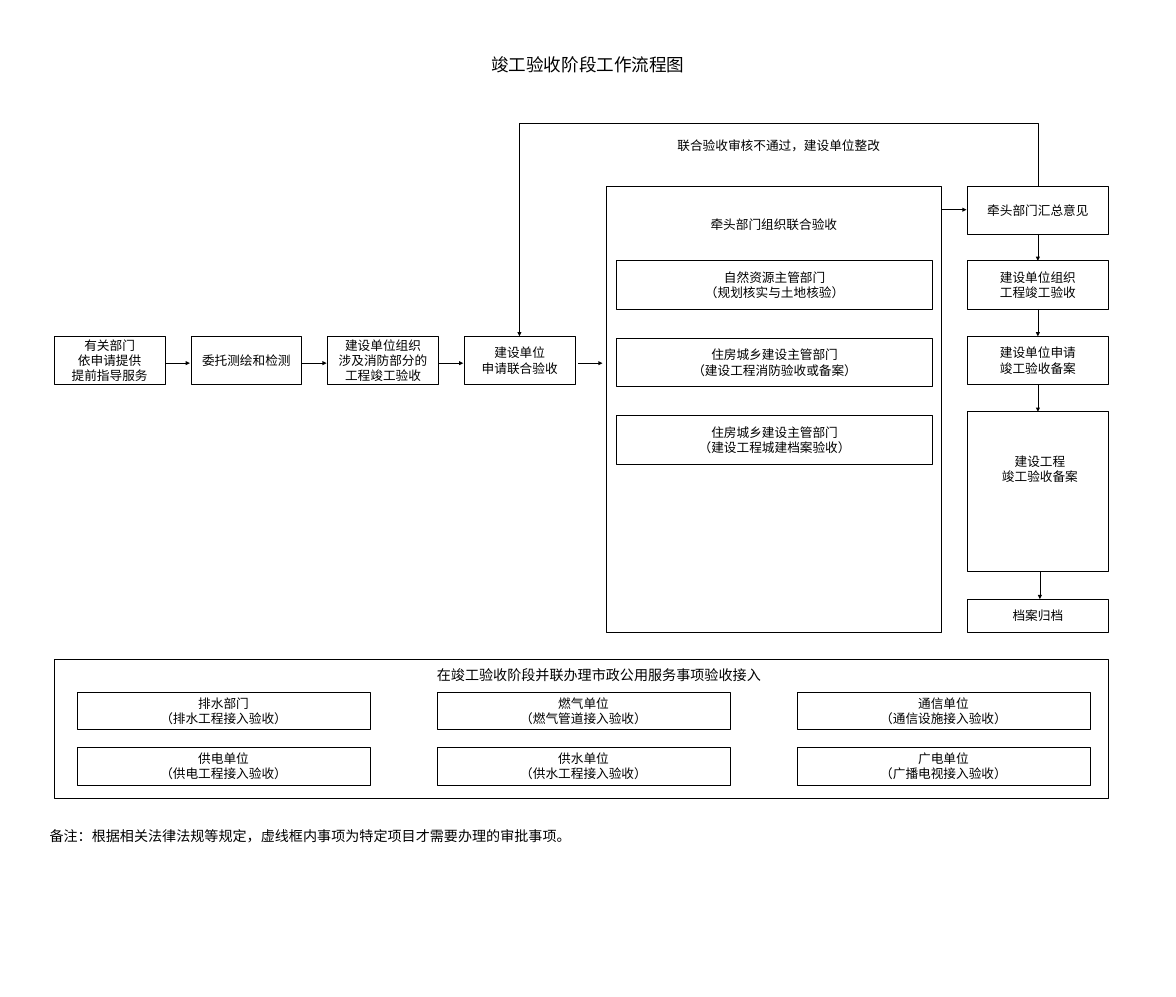
from dataclasses import dataclass

from lxml import etree
from pptx import Presentation
from pptx import util as u
from pptx.dml.color import RGBColor
from pptx.enum import shapes, text
from pptx.oxml import ns


@dataclass(frozen=True)
class Theme:
    font: str = "Noto Sans CJK SC"
    ink: str = "000000"
    title: float = 25
    note: float = 20
    body: float = 18
    border: float = 1
    arrow: float = 0.5


THEME = Theme()
INK = RGBColor.from_string(THEME.ink)


def write(frame, words, size=THEME.body, align=text.PP_ALIGN.CENTER,
          anchor=text.MSO_ANCHOR.MIDDLE, space=None):
    frame.word_wrap = True
    frame.vertical_anchor = anchor
    for i, line in enumerate(words.split("\n")):
        para = frame.paragraphs[0] if i == 0 else frame.add_paragraph()
        para.alignment = align
        if space:
            para.line_spacing = space
        run = para.add_run()
        run.text = line
        font = run.font
        font.size, font.name = u.Pt(size), THEME.font
        font.color.rgb = INK
        # Chinese glyphs take their face from the East Asian font
        east = etree.SubElement(run._r.get_or_add_rPr(), ns.qn("a:ea"))
        east.set("typeface", THEME.font)


def label(slide, box, words, **style):
    style.setdefault("anchor", text.MSO_ANCHOR.TOP)
    area = slide.shapes.add_textbox(*map(u.Inches, box))
    write(area.text_frame, words, **style)
    if style["anchor"] == text.MSO_ANCHOR.TOP:
        area.text_frame.auto_size = text.MSO_AUTO_SIZE.SHAPE_TO_FIT_TEXT


def frame(slide, box, words=""):
    """Outlined rectangle, with centred text if there is any."""
    rect = slide.shapes.add_shape(shapes.MSO_SHAPE.RECTANGLE, *map(u.Inches, box))
    rect.shadow.inherit = False
    rect.fill.background()
    rect.line.color.rgb = INK
    rect.line.width = u.Pt(THEME.border)
    if words:
        write(rect.text_frame, words)


def arrow(slide, start, end, kind=shapes.MSO_CONNECTOR.STRAIGHT):
    link = slide.shapes.add_connector(kind, *map(u.Inches, (*start, *end)))
    link.line.color.rgb = INK
    link.line.width = u.Pt(THEME.arrow)
    tail = etree.SubElement(link.line._get_or_add_ln(), ns.qn("a:tailEnd"))
    tail.set("type", "triangle")
    etree.SubElement(link._element.spPr, ns.qn("a:effectLst"))
    return link


def steps(slide, left, top):
    """Row of steps that leads to the joint acceptance panel."""
    wide, high, pitch = 2.19, 0.95, 2.7
    names = ["有关部门\n依申请提供\n提前指导服务", "委托测绘和检测",
             "建设单位组织\n涉及消防部分的工程竣工验收", "建设单位\n申请联合验收"]
    for i, name in enumerate(names):
        x = left + i * pitch
        frame(slide, (x, top, wide, high), name)
        tip = x + wide + (0.06 if i == len(names) - 1 else 0.01)
        arrow(slide, (tip, top + 0.53), (tip + 0.48, top + 0.53))


def joint(slide, left, top, wide, high):
    """Panel of departments that accept the works together."""
    frame(slide, (left, top, wide, high))
    label(slide, (left + 1.4, top + 0.52, 3.83, 0.5), "牵头部门组织联合验收",
          anchor=text.MSO_ANCHOR.MIDDLE)
    names = ["自然资源主管部门\n（规划核实与土地核验）",
             "住房城乡建设主管部门\n（建设工程消防验收或备案）",
             "住房城乡建设主管部门\n（建设工程城建档案验收）"]
    for i, name in enumerate(names):
        y = top + 1.48 + i * 1.53
        frame(slide, (left + 0.21, y, 6.24, 0.95), name)
    arrow(slide, (left + wide, top + 0.47), (left + wide + 0.49, top + 0.47))


def closing(slide, left, top, wide):
    """Column of steps from the summary to the archive."""
    mid = left + wide / 2
    stages = [(0, 0.95, "牵头部门汇总意见"), (1.48, 0.95, "建设单位组织\n工程竣工验收"),
              (2.97, 0.95, "建设单位申请\n竣工验收备案"), (4.46, 3.15, ""),
              (8.16, 0.65, "档案归档")]
    for drop, high, name in stages:
        frame(slide, (left, top + drop, wide, high), name)
    for (drop, high, _), (below, _, _) in zip(stages, stages[1:]):
        x = mid + (0 if high < 1 else 0.04)
        arrow(slide, (x, top + drop + high), (x, top + below))
    label(slide, (left - 0.52, top + 5.24, 3.92, 0.71), "建设工程\n竣工验收备案")


def rework(slide, start, end, rise):
    """Elbow that leaves start upwards, runs across and drops onto end."""
    (x1, y1), (x2, y2) = start, end
    cx, cy = (x1 + x2) / 2, (y1 + y2) / 2
    across, down = (x1 - x2) / 2, (y2 - y1) / 2
    # A quarter turn swaps the sides of the box around its centre
    link = arrow(slide, (cx + down, cy + across), (cx - down, cy - across),
                 shapes.MSO_CONNECTOR.ELBOW)
    link._element.spPr.xfrm.set("rot", str(270 * 60000))
    shape = link._element.spPr.find(ns.qn("a:prstGeom"))
    bends = shape.find(ns.qn("a:avLst"))
    if bends is None:
        bends = etree.SubElement(shape, ns.qn("a:avLst"))
    bend = etree.SubElement(bends, ns.qn("a:gd"))
    bend.set("name", "adj1")
    bend.set("fmla", f"val {round(-rise / (y2 - y1) * 100000)}")
    label(slide, (10.34, y1 - 1, 10.08, 0.4), "联合验收审核不通过，建设单位整改")


def utility(slide, left, top, wide, high):
    """Panel with a grid of public utility connections."""
    frame(slide, (left, top, wide, high))
    label(slide, (left + 4.24, top + 0.08, 13.04, 0.44),
          "在竣工验收阶段并联办理市政公用服务事项验收接入", size=THEME.note)
    names = ["排水部门\n（排水工程接入验收）", "燃气单位\n（燃气管道接入验收）",
             "通信单位\n（通信设施接入验收）", "供电单位\n（供电工程接入验收）",
             "供水单位\n（供水工程接入验收）", "广电单位\n（广播电视接入验收）"]
    for i, name in enumerate(names):
        row, col = divmod(i, 3)
        frame(slide, (left + 0.45 + col * 7.11, top + 0.65 + row * 1.09,
                      5.79, 0.74), name)


def main():
    deck = Presentation()
    # A sheet of 59 by 50 cm, in tenths of a point
    deck.slide_width, deck.slide_height = u.Pt(1672.4), u.Pt(1417.3)
    slide = deck.slides.add_slide(deck.slide_layouts[6])
    label(slide, (6.57, 1.01, 10.08, 0.52), "竣工验收阶段工作流程图", size=THEME.title)
    steps(slide, 1.07, 6.64)
    joint(slide, 11.97, 3.67, 6.63, 8.81)
    closing(slide, 19.1, 3.67, 2.8)
    rework(slide, (20.5, 3.67), (10.26, 6.64), 1.23)
    utility(slide, 1.07, 13.02, 20.82, 2.74)
    label(slide, (0.88, 16.13, 12.72, 0.6),
          "备注：根据相关法律法规等规定，虚线框内事项为特定项目才需要办理的审批事项。",
          size=THEME.note, align=text.PP_ALIGN.LEFT, space=1.5)
    deck.save("out.pptx")


if __name__ == "__main__":
    main()
